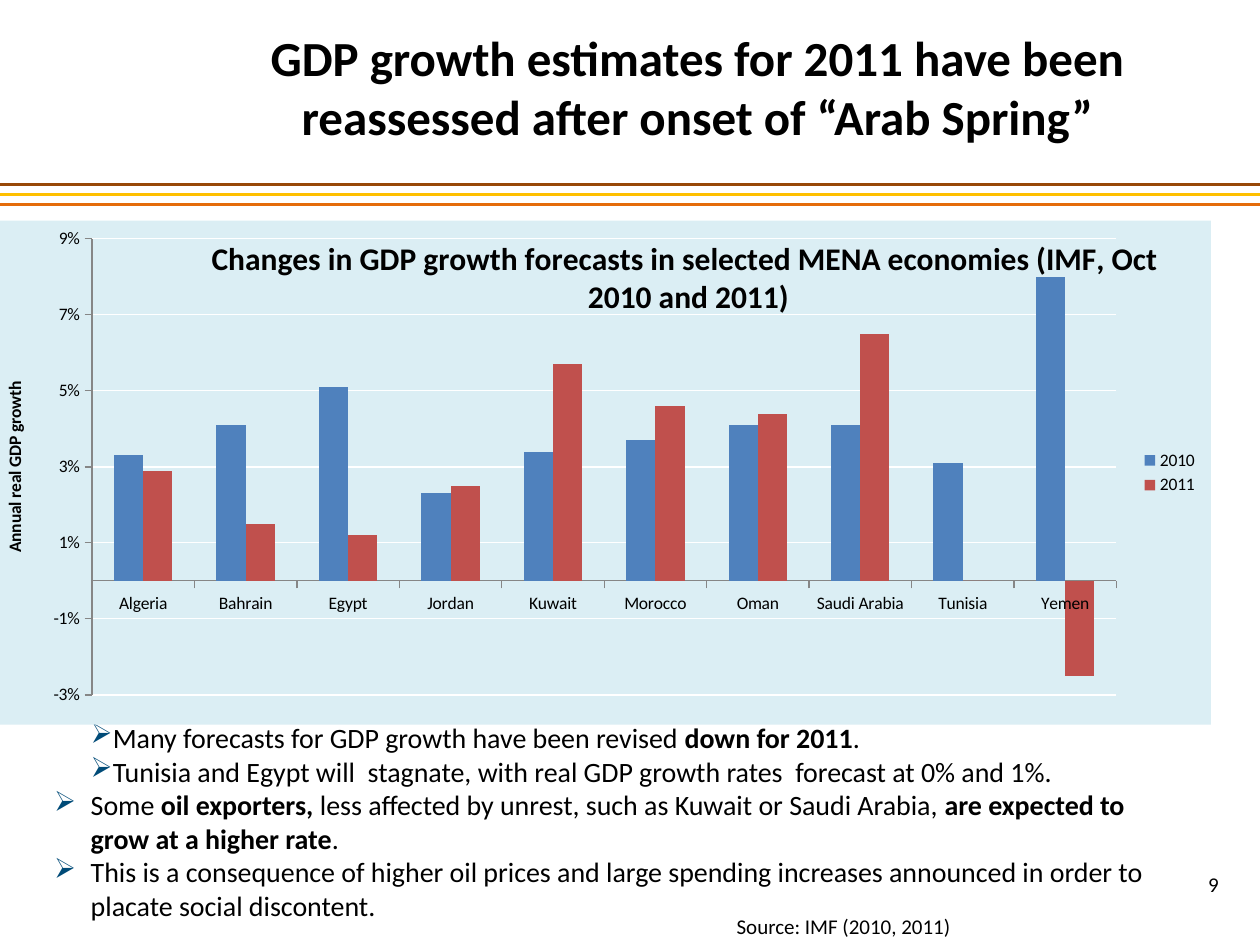
"""Build the slide on reassessed GDP growth estimates for 2011."""
from lxml.etree import SubElement
from pptx import Presentation
from pptx.chart.data import CategoryChartData
from pptx.dml.color import RGBColor
from pptx.enum.chart import XL_CHART_TYPE, XL_LEGEND_POSITION, XL_TICK_MARK
from pptx.enum.shapes import MSO_CONNECTOR
from pptx.enum.text import MSO_ANCHOR, PP_ALIGN
from pptx.oxml import parse_xml
from pptx.oxml.ns import nsdecls, qn
from pptx.util import Cm, Pt

BLACK = RGBColor(0x00, 0x00, 0x00)
WHITE = RGBColor(0xFF, 0xFF, 0xFF)
GREY = RGBColor(0x86, 0x86, 0x86)
BLUE = RGBColor(0x4F, 0x81, 0xBD)
RED = RGBColor(0xC0, 0x50, 0x4D)
NAVY = RGBColor(0x00, 0x4B, 0x78)
PALE = RGBColor(0xDB, 0xEE, 0xF4)
RULES = [RGBColor(0x98, 0x48, 0x07), RGBColor(0xFF, 0xC0, 0x00), RGBColor(0xE4, 0x6C, 0x0A)]

TITLE = "GDP growth estimates for 2011 have been reassessed after onset of “Arab Spring”"
SOURCE = "Source: IMF (2010, 2011)"
NUMBER = "9"
CHART_TITLE = "Changes in GDP growth forecasts in selected MENA economies (IMF, Oct  2010 and 2011)"
AXIS_TITLE = "Annual real GDP growth"
GROWTH = [
    ("Algeria", 0.033, 0.029), ("Bahrain", 0.041, 0.015), ("Egypt", 0.051, 0.012),
    ("Jordan", 0.023, 0.025), ("Kuwait", 0.034, 0.057), ("Morocco", 0.037, 0.046),
    ("Oman", 0.041, 0.044), ("Saudi Arabia", 0.041, 0.065), ("Tunisia", 0.031, 0),
    ("Yemen", 0.08, -0.025),
]
SERIES = [("2010", BLUE), ("2011", RED)]
HANG = 0.74
FIRST_LINE, HANGING = (0, HANG), (HANG, -HANG)
BULLETS = [
    (FIRST_LINE, [("Many forecasts for GDP growth have been revised ", False),
                  ("down for 2011", True), (".", False)]),
    (FIRST_LINE, [("Tunisia and Egypt will  stagnate, with real GDP growth rates  "
                   "forecast at 0% and 1%.", False)]),
    (HANGING, [("Some ", False), ("oil exporters, ", True),
               ("less affected by unrest, such as Kuwait or Saudi Arabia, ", False),
               ("are expected to grow at a higher rate", True), (".", False)]),
    (HANGING, [("This is a consequence of higher oil prices and large spending increases "
                "announced in order to placate social discontent.", False)]),
]


def style(obj, **values):
    for name, value in values.items():
        setattr(obj, name, value)


def set_font(font, size, bold=False):
    style(font, name="Calibri", size=Pt(size), bold=bold)
    font.color.rgb = BLACK


def add_run(p, text, size, bold=False):
    r = p.add_run()
    r.text = text
    set_font(r.font, size, bold)


def add_box(s, box, anchor=MSO_ANCHOR.TOP):
    tf = s.shapes.add_textbox(*map(Cm, box)).text_frame
    style(tf, word_wrap=True, vertical_anchor=anchor)
    return tf


def add_label(s, box, text, size, align, anchor, bold=False):
    p = add_box(s, box, anchor).paragraphs[0]
    p.alignment = align
    add_run(p, text, size, bold)


def add_bullet(p, indent):
    pPr = p._p.get_or_add_pPr()
    for name, value in zip(("marL", "indent"), indent):
        pPr.set(name, str(Cm(value)))
    SubElement(SubElement(pPr, qn("a:buClr")), qn("a:srgbClr"), val=str(NAVY))
    SubElement(pPr, qn("a:buChar"), char="➢")
    tabs = SubElement(pPr, qn("a:tabLst"))
    for pos in [HANG] + [1.25 * i for i in range(1, 8)]:
        SubElement(tabs, qn("a:tab"), pos=str(Cm(pos)), algn="l")


def add_bullets(s, box):
    tf = add_box(s, box)
    for i, (indent, runs) in enumerate(BULLETS):
        p = tf.add_paragraph() if i else tf.paragraphs[0]
        add_bullet(p, indent)
        for text, bold in runs:
            add_run(p, text, 16, bold)


def add_rules(s, width, top, step):
    for i, color in enumerate(RULES):
        y = Cm(top + i * step)
        sp = s.shapes.add_connector(MSO_CONNECTOR.STRAIGHT, 0, y, width, y)
        sp.line.color.rgb = color
        sp.line.width = Pt(1.75)
        SubElement(sp._element.spPr, qn("a:effectLst"))


def set_layout(parent, index, **values):
    for old in parent.findall(qn("c:layout")):
        parent.remove(old)
    items = "".join(f'<c:{k} val="{v}"/>' for k, v in values.items())
    parent.insert(index, parse_xml(
        f'<c:layout {nsdecls("c")}><c:manualLayout>{items}</c:manualLayout></c:layout>'))


def add_title(owner, text, size):
    tf = owner.text_frame
    add_run(tf.paragraphs[0], text, size, True)


def add_growth_chart(s, box):
    data = CategoryChartData(number_format="0%")
    names, *columns = zip(*GROWTH)
    data.categories = names
    for (name, _), values in zip(SERIES, columns):
        data.add_series(name, values)
    chart = s.shapes.add_chart(XL_CHART_TYPE.COLUMN_CLUSTERED, *map(Cm, box), data).chart
    set_font(chart.font, 10)
    space = chart._chartSpace
    space.find(qn("c:chart")).addnext(parse_xml(
        f'<c:spPr {nsdecls("c", "a")}><a:solidFill><a:srgbClr val="{PALE}"/></a:solidFill>'
        '<a:ln><a:noFill/></a:ln></c:spPr>'))

    plot = chart.plots[0]
    style(plot, gap_width=150, overlap=0, vary_by_categories=False)
    for ser, (_, color) in zip(plot.series, SERIES):
        ser.invert_if_negative = False
        ser.format.fill.solid()
        ser.format.fill.fore_color.rgb = color

    cat, val = chart.category_axis, chart.value_axis
    style(val, minimum_scale=-0.03, maximum_scale=0.09, major_unit=0.02,
          has_major_gridlines=True)
    style(val.tick_labels, number_format="0%", number_format_is_linked=False)
    for axis in (cat, val):
        style(axis, major_tick_mark=XL_TICK_MARK.OUTSIDE, minor_tick_mark=XL_TICK_MARK.NONE)
        axis.format.line.color.rgb = GREY
        axis.format.line.width = Pt(0.75)
    grid = val.major_gridlines.format.line
    grid.color.rgb = WHITE
    grid.width = Pt(0.75)
    add_title(val.axis_title, AXIS_TITLE, 10)

    chart.has_legend = True
    style(chart.legend, position=XL_LEGEND_POSITION.RIGHT, include_in_layout=False)
    set_font(chart.legend.font, 10)
    add_title(chart.chart_title, CHART_TITLE, 18)
    title = chart.chart_title._element
    set_layout(title, 1, xMode="edge", yMode="edge", x=0.17, y=0.02)
    title.find(qn("c:overlay")).set("val", "1")
    set_layout(space.find(".//" + qn("c:plotArea")), 0, layoutTarget="inner",
               xMode="edge", yMode="edge", x=0.076, y=0.036, w=0.846, h=0.905)


def main():
    prs = Presentation()
    style(prs, slide_width=Cm(25.4), slide_height=Cm(19.05))
    s = prs.slides.add_slide(prs.slide_layouts[6])
    add_rules(s, prs.slide_width, 3.72, 0.2)
    add_label(s, (4.01, 0.84, 20.09, 1.8), TITLE, 28, PP_ALIGN.CENTER, MSO_ANCHOR.MIDDLE, True)
    add_label(s, (18.9, 17.32, 5.92, 1.02), NUMBER, 12, PP_ALIGN.RIGHT, MSO_ANCHOR.MIDDLE)
    add_bullets(s, (0.84, 14.4, 22.86, 4.37))
    add_label(s, (14.6, 18.29, 8.05, 0.76), SOURCE, 12, PP_ALIGN.LEFT, MSO_ANCHOR.TOP)
    add_growth_chart(s, (0, 4.45, 24.41, 10.16))
    prs.save("out.pptx")


if __name__ == "__main__":
    main()
